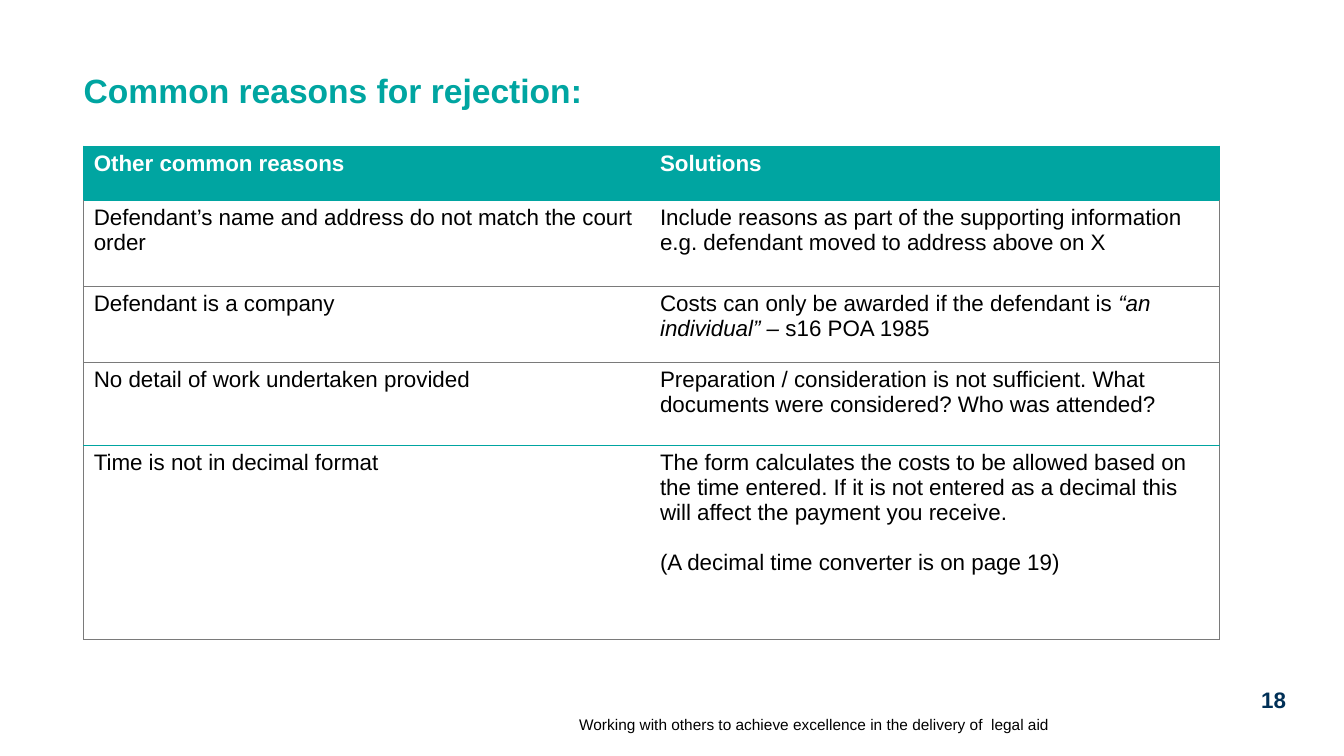
from dataclasses import dataclass
from typing import NamedTuple

from lxml.etree import SubElement
from pptx import Presentation
from pptx.dml.color import RGBColor
from pptx.enum.text import MSO_ANCHOR, MSO_AUTO_SIZE, PP_ALIGN
from pptx.oxml.ns import qn
from pptx.slide import Slide
from pptx.table import _Cell
from pptx.text.text import TextFrame, _Paragraph
from pptx.util import Cm, Pt

COLOURS = {
    "teal": "00A5A1",
    "navy": "003057",
    "black": "000000",
    "white": "FFFFFF",
    "grey": "7A7A7A",
}
FONT = "Arial"
BODY_SIZE = 16
COLUMN_WIDTHS = (14.27, 14.35)


class Run(NamedTuple):
    text: str
    italic: bool = False


@dataclass
class Reason:
    height: float
    problem: str
    solution: list[list[Run]]
    rule_below: str = "grey"


@dataclass
class Label:
    text: str
    left: float
    top: float
    width: float
    height: float
    size: int
    colour: str
    bold: bool
    alignment: PP_ALIGN
    anchor: MSO_ANCHOR


HEADINGS = Reason(1.37, "Other common reasons", [[Run("Solutions")]], "teal")
REASONS = [
    Reason(2.16, "Defendant’s name and address do not match the court order",
           [[Run("Include reasons as part of the supporting information "
                 "e.g. defendant moved to address above on X")]]),
    Reason(1.93, "Defendant is a company",
           [[Run("Costs can only be awarded if the defendant is "),
             Run("“an individual” – ", True), Run("s16 POA 1985")]]),
    Reason(2.08, "No detail of work undertaken provided",
           [[Run("Preparation / consideration is not sufficient. "
                 "What documents were considered? Who was attended?")]], "teal"),
    Reason(4.88, "Time is not in decimal format",
           [[Run("The form calculates the costs to be allowed based on the time "
                 "entered. If it is not entered as a decimal this will affect "
                 "the payment you receive.")],
            [Run("(A decimal time converter is on page 19)")]]),
]
LABELS = [
    Label("18", 31.6, 17.3, 0.99, 0.71, 16, "navy", True,
          PP_ALIGN.CENTER, MSO_ANCHOR.TOP),
    Label("Working with others to achieve excellence in the delivery of  legal aid",
          1.45, 17.58, 25, 0.91, 11, "black", False,
          PP_ALIGN.RIGHT, MSO_ANCHOR.BOTTOM),
]


def style_paragraph(paragraph: _Paragraph, size: int, colour: str, bold: bool) -> None:
    """Set the font of a whole paragraph."""
    font = paragraph.font
    font.name, font.size, font.bold = FONT, Pt(size), bold
    font.color.rgb = RGBColor.from_string(COLOURS[colour])


def clear_margins(frame: TextFrame) -> None:
    """Remove the insets of a text frame."""
    frame.margin_left = frame.margin_right = frame.margin_top = frame.margin_bottom = 0


def set_borders(cell: _Cell, borders: dict[str, str | None]) -> None:
    """Draw a thin line on each named side, or none where the colour is missing."""
    properties = cell._tc.get_or_add_tcPr()
    for index, side in enumerate(("lnL", "lnR", "lnT", "lnB")):
        line = SubElement(properties, qn(f"a:{side}"), w=str(Pt(0.5)))
        properties.insert(index, line)
        colour = borders[side]
        if colour:
            fill = SubElement(line, qn("a:solidFill"))
            SubElement(fill, qn("a:srgbClr"), val=COLOURS[colour])
        else:
            SubElement(line, qn("a:noFill"))


def fill_cell(cell: _Cell, content: list[list[Run]], is_heading: bool) -> None:
    """Write the paragraphs of a cell and colour it."""
    if is_heading:
        cell.fill.solid()
        cell.fill.fore_color.rgb = RGBColor.from_string(COLOURS["teal"])
    else:
        cell.fill.background()
    for index, runs in enumerate(content):
        frame = cell.text_frame
        paragraph = frame.add_paragraph() if index else frame.paragraphs[0]
        if index:
            paragraph.space_before = Pt(18)
        style_paragraph(paragraph, BODY_SIZE, "white" if is_heading else "black", is_heading)
        for text, italic in runs:
            run = paragraph.add_run()
            run.text = text
            if italic:
                run.font.italic = True


def add_title(slide: Slide, text: str) -> None:
    """Place and format the title placeholder."""
    title = slide.shapes.title
    title.left, title.top, title.width, title.height = Cm(2.11), Cm(1.88), Cm(30.18), Cm(0.97)
    frame = title.text_frame
    frame.text = text
    frame.auto_size = MSO_AUTO_SIZE.NONE
    frame.vertical_anchor = MSO_ANCHOR.TOP
    clear_margins(frame)
    paragraph = frame.paragraphs[0]
    paragraph.alignment = PP_ALIGN.LEFT
    paragraph.line_spacing = 0.9
    style_paragraph(paragraph, 24, "teal", True)


def add_reasons_table(slide: Slide) -> None:
    """Build the table of reasons and solutions."""
    rows = [HEADINGS, *REASONS]
    table = slide.shapes.add_table(
        len(rows), len(COLUMN_WIDTHS), Cm(2.11), Cm(3.68),
        Cm(sum(COLUMN_WIDTHS)), Cm(sum(row.height for row in rows)),
    ).table
    table.horz_banding = False
    for column, width in zip(table.columns, COLUMN_WIDTHS):
        column.width = Cm(width)
    rule_above = "teal"
    for row_index, row in enumerate(rows):
        table.rows[row_index].height = Cm(row.height)
        is_heading = row is HEADINGS
        side_colour = "teal" if is_heading else "grey"
        for column_index, content in enumerate(([[Run(row.problem)]], row.solution)):
            cell = table.cell(row_index, column_index)
            fill_cell(cell, content, is_heading)
            set_borders(cell, {
                "lnL": None if column_index else side_colour,
                "lnR": side_colour if column_index else None,
                "lnT": rule_above,
                "lnB": row.rule_below,
            })
        rule_above = row.rule_below


def add_label(slide: Slide, label: Label) -> None:
    """Add a line of text at the foot of the slide."""
    box = slide.shapes.add_textbox(
        Cm(label.left), Cm(label.top), Cm(label.width), Cm(label.height))
    frame = box.text_frame
    frame.word_wrap = True
    frame.vertical_anchor = label.anchor
    clear_margins(frame)
    frame.text = label.text
    paragraph = frame.paragraphs[0]
    paragraph.alignment = label.alignment
    style_paragraph(paragraph, label.size, label.colour, label.bold)


def main() -> None:
    """Build the slide and save it."""
    presentation = Presentation()
    presentation.slide_width, presentation.slide_height = Cm(33.87), Cm(19.05)
    slide = presentation.slides.add_slide(presentation.slide_layouts[5])
    add_title(slide, "Common reasons for rejection:")
    add_reasons_table(slide)
    for label in LABELS:
        add_label(slide, label)
    presentation.save("out.pptx")


if __name__ == "__main__":
    main()
